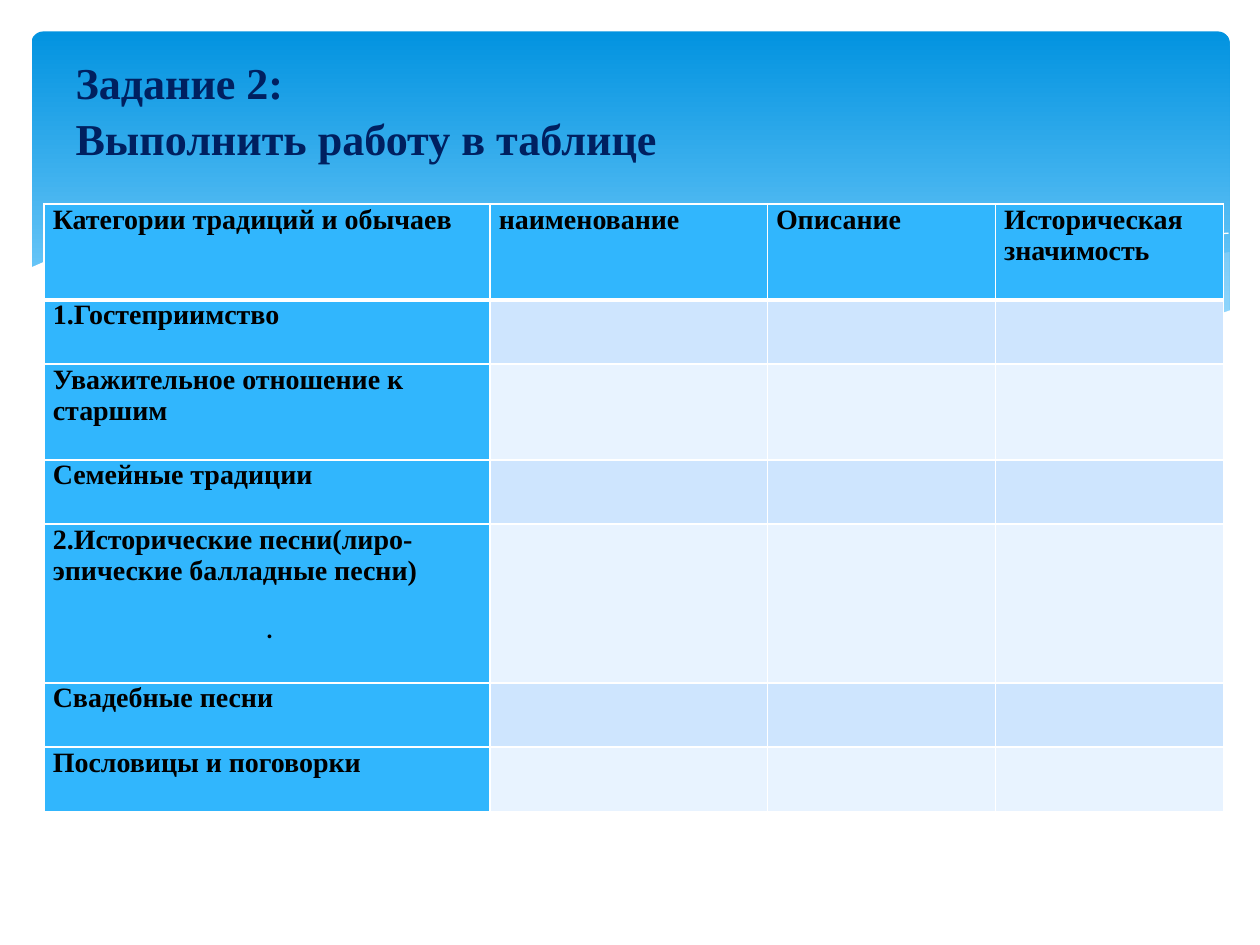
import pptx
import pptx.util
import pptx.dml.color
import pptx.enum.shapes
import pptx.enum.text
import pptx.oxml
import pptx.oxml.ns

Inches, Pt = pptx.util.Inches, pptx.util.Pt
RGBColor = pptx.dml.color.RGBColor
ALIGN, ANCHOR = pptx.enum.text.PP_ALIGN, pptx.enum.text.MSO_ANCHOR

WHITE = RGBColor(0xFF, 0xFF, 0xFF)
BLACK = RGBColor(0, 0, 0)
NAVY = RGBColor(0x00, 0x20, 0x60)
BANNER_TOP = RGBColor(0x02, 0x93, 0xE0)
BANNER_BOTTOM = RGBColor(0x83, 0xD3, 0xFE)
MIST = RGBColor(0xC6, 0xE7, 0xFC)
HEAD = RGBColor(0x31, 0xB6, 0xFD)
BANDS = [RGBColor(0xE8, 0xF3, 0xFF), RGBColor(0xCE, 0xE5, 0xFE)]

TITLE = "Задание 2:\vВыполнить работу в таблице"
HEADERS = ["Категории традиций и обычаев", "наименование", "Описание", "Историческая значимость"]
CATEGORIES = [
    "1.Гостеприимство",
    "Уважительное отношение к старшим",
    "Семейные традиции",
    "2.Исторические песни(лиро-эпические балладные песни)",
    "Свадебные песни",
    "Пословицы и поговорки",
]
COLUMN_WIDTHS = [3.54, 2.2, 1.81, 1.81]
ROW_HEIGHTS = [0.76, 0.51, 0.76, 0.51, 1.26, 0.51, 0.51]
TITLE_FONT = {"name": "Times New Roman", "size": Pt(25.2), "bold": True}
CELL_FONT = {"name": "Times New Roman", "size": Pt(16), "bold": True}
DOT_FONT = {"name": "Calibri", "size": Pt(18), "bold": False}

RIGHT_WAVE = [
    (9.76, 2), (9.48, 2.04), (9.06, 2.13), (8.61, 2.23), (8.05, 2.37), (7.53, 2.48),
    (7.06, 2.57), (6.61, 2.65), (7.05, 2.71), (7.57, 2.76), (8.03, 2.78), (8.44, 2.77),
    (8.81, 2.73), (9.13, 2.67), (9.42, 2.59), (9.76, 2.47),
]
MIDDLE_WAVE = [
    (8.93, 2.73), (8.37, 2.65), (7.75, 2.54), (7.06, 2.4), (6.29, 2.22), (5.84, 2.11),
    (5.41, 2.03), (5.02, 1.96), (4.42, 1.89), (3.99, 1.86), (3.61, 1.85), (3.28, 1.87),
    (2.86, 1.91), (3.42, 1.99), (4.04, 2.11), (4.49, 2.22), (5.3, 2.4), (6.01, 2.55),
    (6.65, 2.66), (7.22, 2.74), (7.73, 2.77), (8.18, 2.78), (8.57, 2.77),
]
LONG_CURVE = [
    (3.09, 1.95), (3.44, 1.9), (3.87, 1.87), (4.33, 1.87), (4.89, 1.9), (5.56, 1.97),
    (6.36, 2.08), (7.27, 2.26), (8.31, 2.51), (9.07, 2.72),
]
SHORT_CURVE = [
    (6.13, 2.57), (6.72, 2.41), (7.48, 2.23), (8.36, 2.04), (8.95, 1.94), (9.38, 1.88), (9.75, 1.85),
]
WHITE_WAVE = [
    (9.77, 2.46), (9.4, 2.59), (8.99, 2.69), (8.5, 2.75), (8.09, 2.77), (7.61, 2.75),
    (7.08, 2.7), (6.48, 2.62), (5.79, 2.5), (5.03, 2.33), (4.47, 2.2), (3.91, 2.07),
    (3.4, 1.97), (2.92, 1.9), (2.5, 1.86), (2.11, 1.84), (1.77, 1.84), (1.32, 1.86),
    (0.95, 1.91), (0.67, 1.97), (0.46, 2.03), (0.23, 2.13), (0.23, 3.29), (9.77, 3.29),
]
WAVES = [
    (RIGHT_WAVE, MIST, 29),
    (MIDDLE_WAVE, MIST, 40),
    (LONG_CURVE, None, 100),
    (SHORT_CURVE, None, 100),
    (WHITE_WAVE, WHITE, 100),
]


def set_values(target, values):
    for name, value in values.items():
        setattr(target, name, value)


def style_text(para, font, color):
    set_values(para.font, font)
    para.font.color.rgb = color


def add_banner(page):
    banner = page.shapes.add_shape(
        pptx.enum.shapes.MSO_SHAPE.ROUNDED_RECTANGLE, *map(Inches, (0.25, 0.25, 9.51, 2.7)))
    banner.adjustments[0] = 0.034
    banner.shadow.inherit = False
    banner.line.fill.background()
    banner.fill.gradient()
    banner.fill.gradient_angle = 270
    stops = zip(banner.fill.gradient_stops, (BANNER_TOP, BANNER_BOTTOM), (0, 0.9))
    for stop, color, position in stops:
        stop.color.rgb = color
        stop.position = position


def add_wave(page, points, color, opacity):
    places = [(Inches(x), Inches(y)) for x, y in points]
    builder = page.shapes.build_freeform(*places[0])
    builder.add_line_segments(places[1:], close=color is not None)
    wave = builder.convert_to_shape()
    wave.shadow.inherit = False
    if color is None:
        wave.fill.background()
        wave.line.color.rgb = WHITE
        wave.line.width = Pt(0)
        return
    wave.line.fill.background()
    wave.fill.solid()
    wave.fill.fore_color.rgb = color
    if opacity < 100:
        tint = wave._element.spPr.find(".//" + pptx.oxml.ns.qn("a:srgbClr"))
        tint.append(pptx.oxml.parse_xml(
            f'<a:alpha {pptx.oxml.ns.nsdecls("a")} val="{opacity * 1000}"/>'))


def set_borders(cell, widths):
    properties = cell._tc.get_or_add_tcPr()
    for index, (side, width) in enumerate(widths.items()):
        properties.insert(index, pptx.oxml.parse_xml(
            f'<a:ln{side} {pptx.oxml.ns.nsdecls("a")} w="{Pt(width)}">'
            f'<a:solidFill><a:srgbClr val="{WHITE}"/></a:solidFill></a:ln{side}>'))


def add_grid(page):
    rows = [HEADERS] + [[name, "", "", ""] for name in CATEGORIES]
    frame = page.shapes.add_table(
        len(rows), len(HEADERS), Inches(0.35), Inches(1.62),
        Inches(sum(COLUMN_WIDTHS)), Inches(sum(ROW_HEIGHTS)))
    table = frame.table
    for column, width in zip(table.columns, COLUMN_WIDTHS):
        column.width = Inches(width)
    for r, (texts, height) in enumerate(zip(rows, ROW_HEIGHTS)):
        table.rows[r].height = Inches(height)
        for c, text in enumerate(texts):
            cell = table.cell(r, c)
            set_values(cell, {"margin_left": Inches(0.07), "margin_right": Inches(0.07),
                              "margin_top": 0, "margin_bottom": 0})
            cell.fill.solid()
            cell.fill.fore_color.rgb = HEAD if r == 0 or c == 0 else BANDS[r % 2]
            set_borders(cell, {"L": 1, "R": 1, "T": 3 if r == 1 else 1, "B": 3 if r == 0 else 1})
            cell.text = text
            para = cell.text_frame.paragraphs[0]
            style_text(para, CELL_FONT, BLACK)
            if r < 4:
                para.space_after = Pt(7.5)


def place_title(page):
    title = page.shapes.title
    set_values(title, {"left": Inches(0.5), "top": Inches(0.37),
                       "width": Inches(9), "height": Inches(1.37)})
    title.text_frame.text = TITLE
    set_values(title.text_frame, {"vertical_anchor": ANCHOR.MIDDLE, "word_wrap": True,
                                  "auto_size": pptx.enum.text.MSO_AUTO_SIZE.NONE,
                                  "margin_bottom": Inches(0.44)})
    para = title.text_frame.paragraphs[0]
    set_values(para, {"alignment": ALIGN.LEFT, "line_spacing": 1.05})
    style_text(para, TITLE_FONT, NAVY)
    page.shapes._spTree.append(title._element)


def add_dot(page):
    box = page.shapes.add_textbox(*map(Inches, (2.01, 4.77, 5.49, 0.4)))
    box.text_frame.word_wrap = True
    box.text_frame.text = "."
    style_text(box.text_frame.paragraphs[0], DOT_FONT, BLACK)


def main():
    deck = pptx.Presentation()
    set_values(deck, {"slide_width": Inches(10), "slide_height": Inches(7.5)})
    page = deck.slides.add_slide(deck.slide_layouts[5])
    add_banner(page)
    for wave in WAVES:
        add_wave(page, *wave)
    add_grid(page)
    place_title(page)
    add_dot(page)
    deck.save("out.pptx")


if __name__ == "__main__":
    main()
